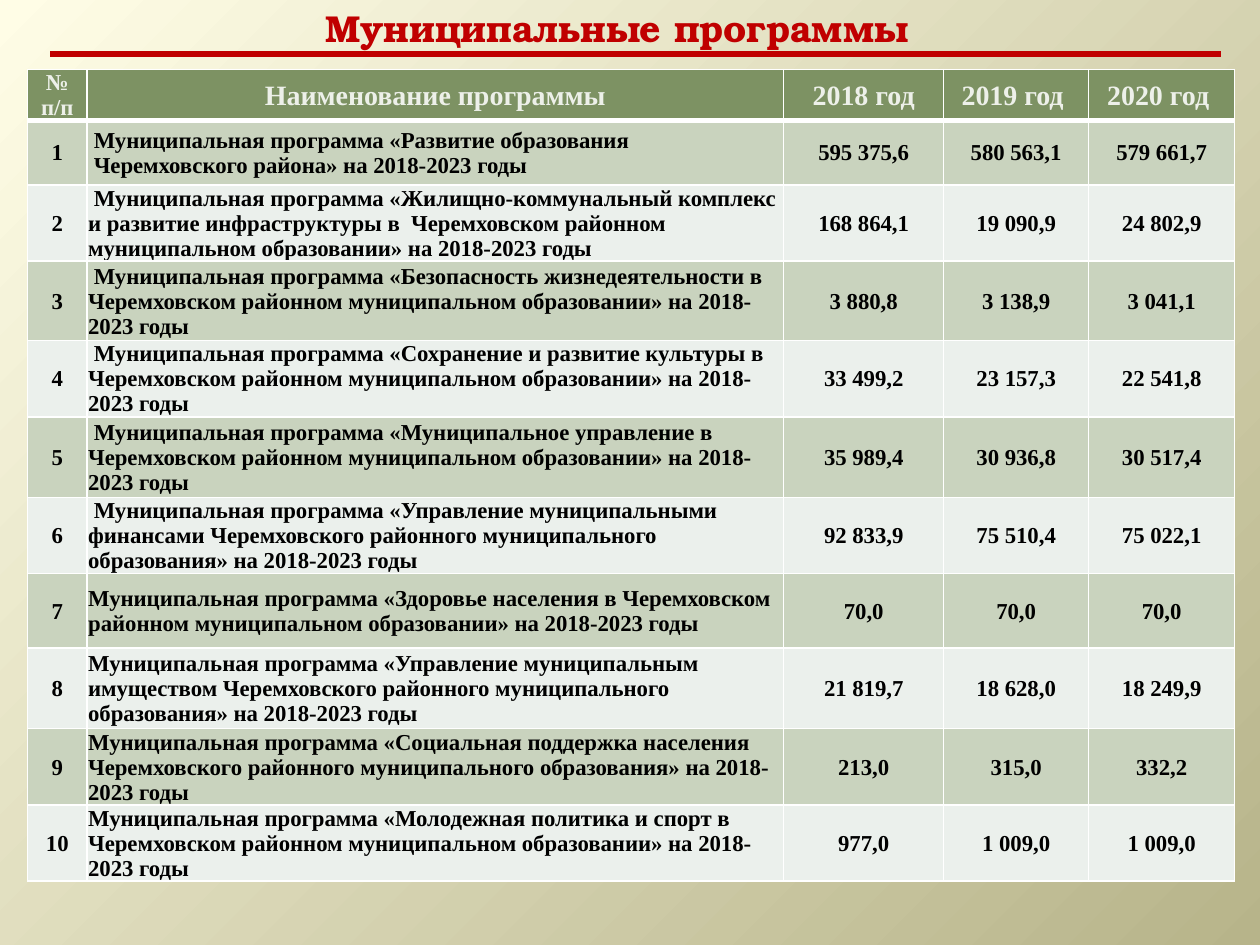
"""Build the slide listing the municipal programmes and their yearly funding."""
from lxml.etree import SubElement
from pptx import Presentation
from pptx.dml.color import RGBColor
from pptx.enum.shapes import MSO_CONNECTOR
from pptx.enum.text import MSO_ANCHOR, PP_ALIGN
from pptx.oxml.ns import qn
from pptx.util import Inches, Pt

RED = RGBColor(0xC0, 0x00, 0x00)
BLACK = RGBColor(0x00, 0x00, 0x00)
WHITE = RGBColor(0xFF, 0xFF, 0xFF)
HEADER_GREEN = RGBColor(0x7D, 0x92, 0x63)
HEADER_TEXT = RGBColor(0xED, 0xF0, 0xE9)
BAND_GREEN = RGBColor(0xC9, 0xD3, 0xBE)
BAND_PALE = RGBColor(0xEB, 0xF0, 0xEC)
CREAM = RGBColor(0xFF, 0xFD, 0xE6)
OLIVE = RGBColor(0xB7, 0xB4, 0x8A)

COLUMN_WIDTHS = [0.47, 5.53, 1.27, 1.15, 1.16]
ROW_HEIGHTS = [0.39, 0.51, 0.56, 0.63, 0.58, 0.64, 0.6, 0.59, 0.64, 0.54, 0.55]
HEADINGS = ["№ п/п", "Наименование программы", "2018 год", "2019 год ", "2020 год "]
PROGRAMMES = [
    (" Муниципальная программа «Развитие образования\n"
     " Черемховского района» на 2018-2023 годы", "595 375,6", "580 563,1", "579 661,7"),
    (" Муниципальная программа «Жилищно-коммунальный комплекс и развитие "
     "инфраструктуры в  Черемховском районном муниципальном образовании» "
     "на 2018-2023 годы", "168 864,1", "19 090,9", "24 802,9"),
    (" Муниципальная программа «Безопасность жизнедеятельности в Черемховском "
     "районном муниципальном образовании» на 2018-2023 годы",
     "3 880,8", "3 138,9", "3 041,1"),
    (" Муниципальная программа «Сохранение и развитие культуры в Черемховском "
     "районном муниципальном образовании» на 2018-2023 годы",
     "33 499,2", "23 157,3", "22 541,8"),
    (" Муниципальная программа «Муниципальное управление в Черемховском "
     "районном муниципальном образовании» на 2018-2023 годы",
     "35 989,4", "30 936,8", "30 517,4"),
    (" Муниципальная программа «Управление муниципальными финансами Черемховского "
     "районного муниципального образования» на 2018-2023 годы",
     "92 833,9", "75 510,4", "75 022,1"),
    ("Муниципальная программа «Здоровье населения в Черемховском районном "
     "муниципальном образовании» на 2018-2023 годы", "70,0", "70,0", "70,0"),
    ("Муниципальная программа «Управление муниципальным имуществом Черемховского "
     "районного муниципального образования» на 2018-2023 годы",
     "21 819,7", "18 628,0", "18 249,9"),
    ("Муниципальная программа «Социальная поддержка населения Черемховского "
     "районного муниципального образования» на 2018-2023 годы",
     "213,0", "315,0", "332,2"),
    ("Муниципальная программа «Молодежная политика и спорт в Черемховском "
     "районном муниципальном образовании» на 2018-2023 годы",
     "977,0", "1 009,0", "1 009,0"),
]


class SlideBuilder:
    title_font = "TeX Gyre Bonum"
    table_font = "Times New Roman"

    def __init__(self, slide):
        self.slide = slide

    def background(self, centre, edge):
        fill = self.slide.background.fill
        fill.gradient()
        for stop, color in zip(fill.gradient_stops, (centre, edge)):
            stop.color.rgb = color
        gradient = next(self.slide.element.iter(qn("a:gradFill")))
        gradient.remove(gradient.find(qn("a:lin")))
        radial = SubElement(gradient, qn("a:path"), path="circle")
        SubElement(radial, qn("a:fillToRect"), r="100000", b="100000")

    def add_text(self, frame, text, font, size, color, align):
        for index, line in enumerate(text.split("\n")):
            paragraph = frame.add_paragraph() if index else frame.paragraphs[0]
            paragraph.alignment = align
            run = paragraph.add_run()
            run.text = line
            run.font.name = font
            run.font.size = Pt(size)
            run.font.bold = True
            run.font.color.rgb = color

    def title(self, text, left, top, width, height):
        box = self.slide.shapes.add_textbox(
            Inches(left), Inches(top), Inches(width), Inches(height))
        frame = box.text_frame
        frame.word_wrap = True
        frame.vertical_anchor = MSO_ANCHOR.MIDDLE
        self.add_text(frame, text, self.title_font, 21.4, RED, PP_ALIGN.CENTER)

    def rule(self, left, right, y):
        line = self.slide.shapes.add_connector(
            MSO_CONNECTOR.STRAIGHT, Inches(left), Inches(y), Inches(right), Inches(y))
        line.line.color.rgb = RED
        line.line.width = Pt(3.75)
        SubElement(line.element.spPr, qn("a:effectLst"))

    def border(self, cell, side, width):
        edge = SubElement(cell._tc.get_or_add_tcPr(), qn(f"a:ln{side}"), w=str(Pt(width)))
        SubElement(SubElement(edge, qn("a:solidFill")), qn("a:srgbClr"), val=str(WHITE))

    def cell(self, cell, text, fill, size, color, align, top=1, bottom=1):
        cell.margin_left = cell.margin_right = cell.margin_top = Inches(0.01)
        cell.margin_bottom = 0
        cell.vertical_anchor = MSO_ANCHOR.MIDDLE
        for side, width in (("L", 1), ("R", 1), ("T", top), ("B", bottom)):
            self.border(cell, side, width)
        cell.fill.solid()
        cell.fill.fore_color.rgb = fill
        self.add_text(cell.text_frame, text, self.table_font, size, color, align)

    def programme_table(self, left, top):
        table = self.slide.shapes.add_table(
            len(ROW_HEIGHTS), len(COLUMN_WIDTHS), Inches(left), Inches(top),
            Inches(sum(COLUMN_WIDTHS)), Inches(sum(ROW_HEIGHTS))).table
        for column, width in zip(table.columns, COLUMN_WIDTHS):
            column.width = Inches(width)
        for row, height in zip(table.rows, ROW_HEIGHTS):
            row.height = Inches(height)
        for column, heading in enumerate(HEADINGS):
            self.cell(table.cell(0, column), heading, HEADER_GREEN,
                      16 if column else 13, HEADER_TEXT, PP_ALIGN.CENTER, bottom=3)
        for number, programme in enumerate(PROGRAMMES, 1):
            band = BAND_GREEN if number % 2 else BAND_PALE
            for column, text in enumerate((str(number), *programme)):
                align = PP_ALIGN.LEFT if column == 1 else PP_ALIGN.CENTER
                self.cell(table.cell(number, column), text, band, 13, BLACK, align,
                          top=3 if number == 1 else 1)


def main():
    deck = Presentation()
    deck.slide_width, deck.slide_height = Inches(10), Inches(7.5)
    builder = SlideBuilder(deck.slides.add_slide(deck.slide_layouts[6]))
    builder.background(CREAM, OLIVE)
    builder.programme_table(0.22, 0.55)
    builder.title("Муниципальные программы", 0.01, 0, 9.77, 0.43)
    builder.rule(0.4, 9.69, 0.43)
    deck.save("out.pptx")


if __name__ == "__main__":
    main()
